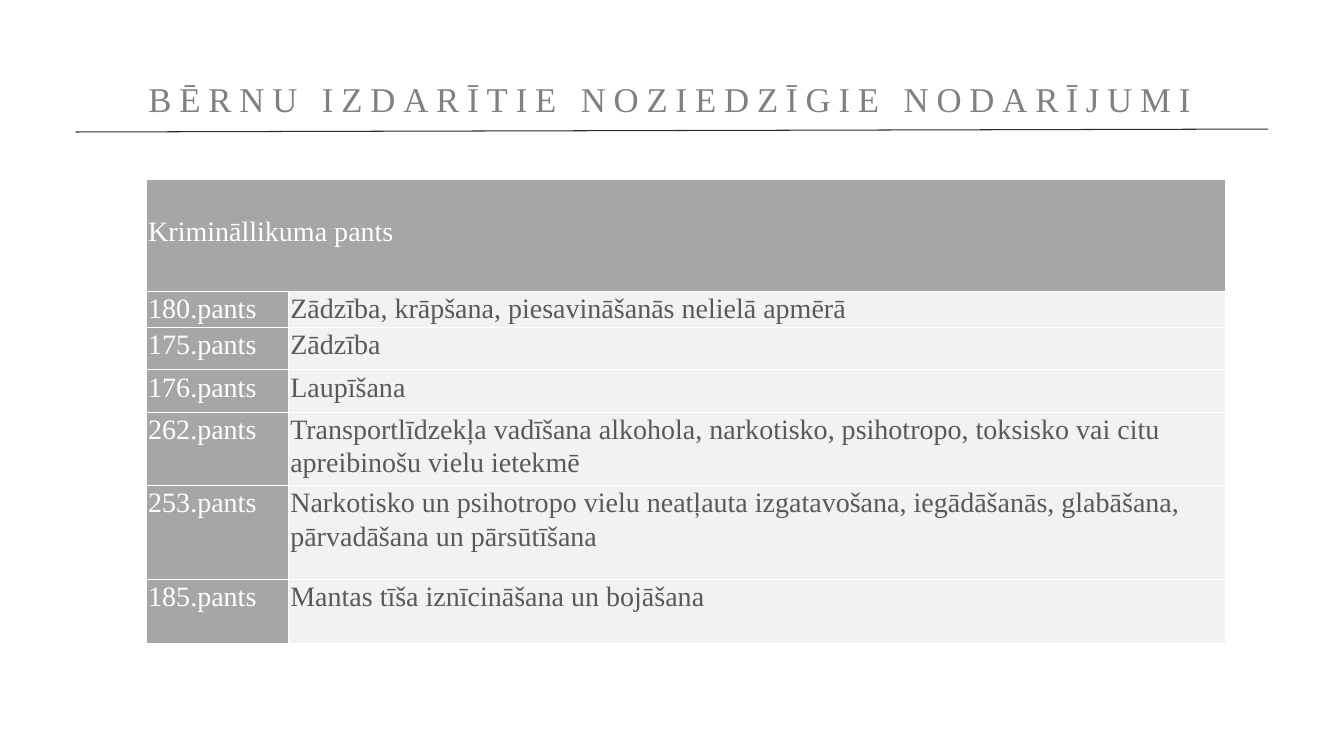
from lxml import etree
from pptx import Presentation
from pptx.dml.color import RGBColor
from pptx.enum.shapes import MSO_CONNECTOR
from pptx.enum.text import MSO_AUTO_SIZE, PP_ALIGN
from pptx.oxml.ns import qn
from pptx.util import Pt

STRAIGHT = MSO_CONNECTOR.STRAIGHT
CENTER = PP_ALIGN.CENTER
GROW = MSO_AUTO_SIZE.SHAPE_TO_FIT_TEXT
FONT = "Times New Roman"
WHITE = RGBColor(0xFF, 0xFF, 0xFF)
RULE = RGBColor(0x2B, 0x2C, 0x30)
TITLE_GRAY = RGBColor(0x80, 0x80, 0x80)
HEADER_GRAY = RGBColor(0xA6, 0xA6, 0xA6)
TEXT_GRAY = RGBColor(0x59, 0x59, 0x59)
PALE_GRAY = RGBColor(0xF2, 0xF2, 0xF2)

HEADER = "Krimināllikuma pants"
ARTICLES = [
    ("180.pants", "Zādzība, krāpšana, piesavināšanās nelielā apmērā"),
    ("175.pants", "Zādzība"),
    ("176.pants", "Laupīšana"),
    ("262.pants", "Transportlīdzekļa vadīšana alkohola, narkotisko, psihotropo, "
                  "toksisko vai citu apreibinošu vielu ietekmē"),
    ("253.pants", "Narkotisko un psihotropo vielu neatļauta izgatavošana, "
                  "iegādāšanās, glabāšana, pārvadāšana un pārsūtīšana"),
    ("185.pants", "Mantas tīša iznīcināšana un bojāšana"),
]
COLUMN_WIDTHS = [101.5, 669.6]
ROW_HEIGHTS = [79.9, 25.2, 30.2, 30.2, 52.6, 67, 46.1]
LINE_HEIGHT = 24.6


def style_paragraph(para, size, color):
    para.font.name = FONT
    para.font.size = Pt(size)
    para.font.color.rgb = color


def add_white_borders(cell):
    properties = cell._tc.get_or_add_tcPr()
    for side in ("a:lnL", "a:lnR", "a:lnT", "a:lnB"):
        border = etree.SubElement(properties, qn(side), w=str(Pt(1)))
        fill = etree.SubElement(border, qn("a:solidFill"))
        etree.SubElement(fill, qn("a:srgbClr"), val=str(WHITE))


deck = Presentation()
deck.slide_width, deck.slide_height = Pt(960), Pt(540)
page = deck.slides.add_slide(deck.slide_layouts[6])

rule = page.shapes.add_connector(STRAIGHT, Pt(54), Pt(94.3), Pt(905.8), Pt(92.2))
rule.line.color.rgb = RULE
rule.line.width = Pt(0.75)
etree.SubElement(rule._element.spPr, qn("a:effectLst"))

title_box = page.shapes.add_textbox(Pt(52.6), Pt(50.4), Pt(851.8), Pt(32.4))
frame = title_box.text_frame
frame.word_wrap = True
frame.auto_size = GROW
frame.margin_left = frame.margin_right = frame.margin_top = frame.margin_bottom = 0
title = frame.paragraphs[0]
title.alignment = CENTER
title.line_spacing = Pt(34.7)
span = title.add_run()
span.text = "BĒRNU IZDARĪTIE NOZIEDZĪGIE NODARĪJUMI"
span.font._element.set("spc", "560")
style_paragraph(title, 24.8, TITLE_GRAY)

table = page.shapes.add_table(
    len(ROW_HEIGHTS), len(COLUMN_WIDTHS), Pt(104.4), Pt(128.4),
    Pt(sum(COLUMN_WIDTHS)), Pt(sum(ROW_HEIGHTS))).table
for column, width in zip(table.columns, COLUMN_WIDTHS):
    column.width = Pt(width)
for row, height in zip(table.rows, ROW_HEIGHTS):
    row.height = Pt(height)
table.cell(0, 0).merge(table.cell(0, 1))

for row_index, texts in enumerate([(HEADER, ""), *ARTICLES]):
    for column_index, text in enumerate(texts):
        cell = table.cell(row_index, column_index)
        is_heading = row_index == 0 or column_index == 0
        cell.margin_left = cell.margin_right = Pt(1.5)
        cell.margin_top = Pt(LINE_HEIGHT if row_index == 0 else 0)
        cell.margin_bottom = 0
        add_white_borders(cell)
        cell.fill.solid()
        cell.fill.fore_color.rgb = HEADER_GRAY if is_heading else PALE_GRAY
        para = cell.text_frame.paragraphs[0]
        para.line_spacing = 1.07
        style_paragraph(para, 20, WHITE if is_heading else TEXT_GRAY)
        if text:
            para.add_run().text = text

deck.save("out.pptx")
